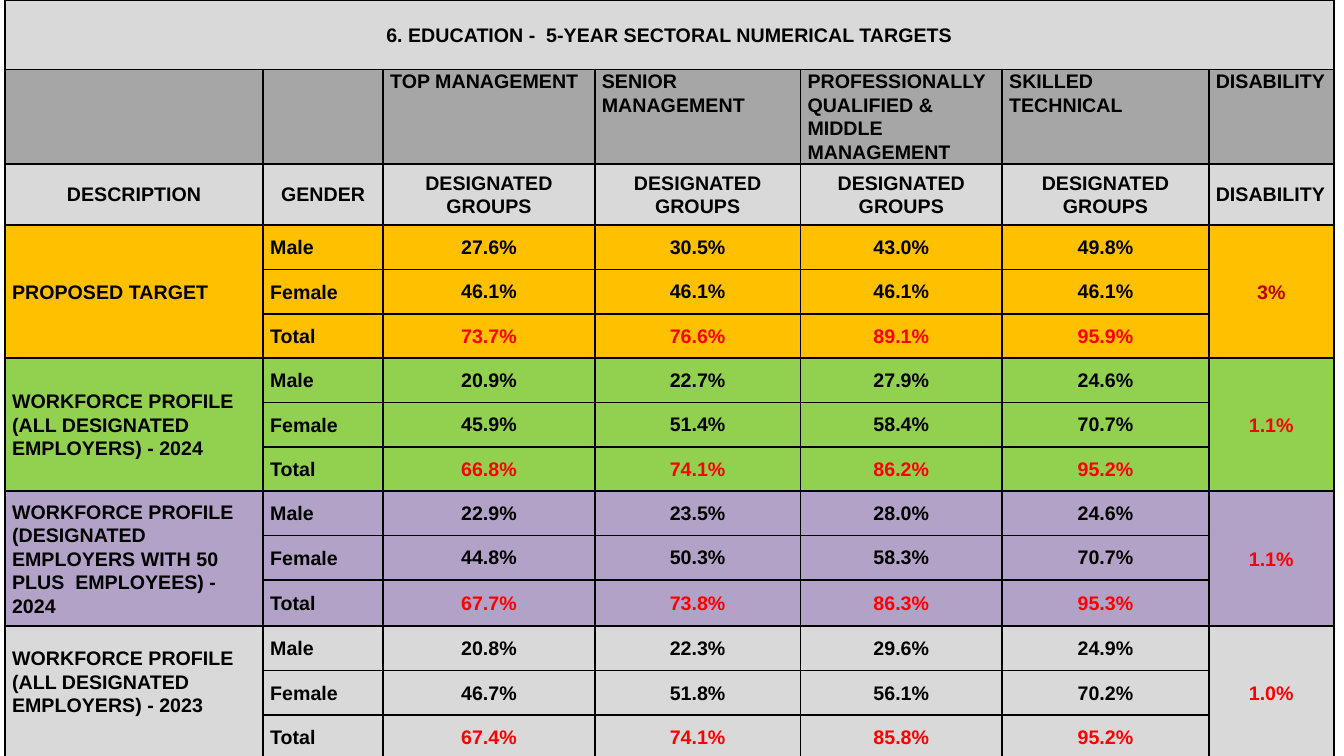
from lxml import etree
from pptx import Presentation
from pptx.dml.color import RGBColor
from pptx.enum.text import MSO_ANCHOR, PP_ALIGN
from pptx.oxml.ns import qn
from pptx.util import Inches, Pt

LEFT, CENTER = PP_ALIGN.LEFT, PP_ALIGN.CENTER
TOP, MIDDLE = MSO_ANCHOR.TOP, MSO_ANCHOR.MIDDLE

BLACK = RGBColor(0x00, 0x00, 0x00)
RED = RGBColor(0xFF, 0x00, 0x00)
DARK_RED = RGBColor(0xC0, 0x00, 0x00)
LIGHT_GREY = RGBColor(0xD9, 0xD9, 0xD9)
GREY = RGBColor(0xA6, 0xA6, 0xA6)
ORANGE = RGBColor(0xFF, 0xC0, 0x00)
GREEN = RGBColor(0x92, 0xD0, 0x50)
PURPLE = RGBColor(0xB3, 0xA2, 0xC7)

TITLE = "6. EDUCATION -  5-YEAR SECTORAL NUMERICAL TARGETS"
LEVELS = ["", "", "TOP MANAGEMENT", "SENIOR MANAGEMENT",
          "PROFESSIONALLY QUALIFIED & MIDDLE MANAGEMENT",
          "SKILLED TECHNICAL", "DISABILITY"]
HEADINGS = ["DESCRIPTION", "GENDER"] + ["DESIGNATED GROUPS"] * 4 + ["DISABILITY"]
GENDERS = ["Male", "Female", "Total"]

# Description, fill, disability share, its colour, one row of shares per gender
GROUPS = [
    ("PROPOSED TARGET", ORANGE, "3%", DARK_RED,
     [(27.6, 30.5, 43.0, 49.8), (46.1, 46.1, 46.1, 46.1), (73.7, 76.6, 89.1, 95.9)]),
    ("WORKFORCE PROFILE (ALL DESIGNATED EMPLOYERS) - 2024", GREEN, "1.1%", RED,
     [(20.9, 22.7, 27.9, 24.6), (45.9, 51.4, 58.4, 70.7), (66.8, 74.1, 86.2, 95.2)]),
    ("WORKFORCE PROFILE (DESIGNATED EMPLOYERS WITH 50 PLUS  EMPLOYEES) - 2024",
     PURPLE, "1.1%", RED,
     [(22.9, 23.5, 28.0, 24.6), (44.8, 50.3, 58.3, 70.7), (67.7, 73.8, 86.3, 95.3)]),
    ("WORKFORCE PROFILE (ALL DESIGNATED EMPLOYERS) - 2023", LIGHT_GREY, "1.0%", RED,
     [(20.8, 22.3, 29.6, 24.9), (46.7, 51.8, 56.1, 70.2), (67.4, 74.1, 85.8, 95.2)]),
]

COL_WIDTHS = [2.56, 1.19, 2.1, 2.04, 2, 2.05, 1.24]
ROW_HEIGHTS = [0.69, 0.9, 0.61] + [0.44] * 8 + [0.46] + [0.44] * 3


def add_borders(cell):
    tc_pr = cell._tc.get_or_add_tcPr()
    for i, side in enumerate(("a:lnL", "a:lnR", "a:lnT", "a:lnB")):
        ln = etree.Element(qn(side), w=str(Pt(1.5)))
        fill = etree.SubElement(ln, qn("a:solidFill"))
        etree.SubElement(fill, qn("a:srgbClr"), val=str(BLACK))
        tc_pr.insert(i, ln)


def fill_cell(cell, text, fill, align=CENTER, color=BLACK, anchor=MIDDLE,
              spacing=1.07, side=0.07, top=0, bottom=0):
    cell.fill.solid()
    cell.fill.fore_color.rgb = fill
    cell.vertical_anchor = anchor
    cell.margin_left = cell.margin_right = Inches(side)
    cell.margin_top, cell.margin_bottom = Inches(top), Inches(bottom)
    p = cell.text_frame.paragraphs[0]
    p.text = text
    p.alignment = align
    p.line_spacing = spacing
    p.font.size = Pt(14)
    for r in p.runs:
        r.font.name = "Arial"
        r.font.size = Pt(14)
        r.font.bold = True
        r.font.color.rgb = color


def add_header(table):
    table.cell(0, 0).merge(table.cell(0, len(COL_WIDTHS) - 1))
    fill_cell(table.cell(0, 0), TITLE, LIGHT_GREY)
    for col, (level, heading) in enumerate(zip(LEVELS, HEADINGS)):
        fill_cell(table.cell(1, col), level, GREY, LEFT, anchor=TOP)
        align = LEFT if heading == "DISABILITY" else CENTER
        fill_cell(table.cell(2, col), heading, LIGHT_GREY, align)


def add_group(table, top_row, group):
    description, fill, disability, disability_color, shares = group
    is_last = group is GROUPS[-1]
    # Labels that span the three gender rows
    last_col = len(COL_WIDTHS) - 1
    for col in (0, last_col):
        table.cell(top_row, col).merge(table.cell(top_row + 2, col))
        for row in range(top_row, top_row + 3):
            fill_cell(table.cell(row, col), "", fill)
    fill_cell(table.cell(top_row, 0), description, fill, LEFT,
              bottom=0.22 if is_last else 0)
    fill_cell(table.cell(top_row, last_col), disability, fill, color=disability_color)
    # Gender rows
    layout = {} if is_last else {"spacing": 1.0, "side": 0.01, "top": 0.01}
    for row, (gender, values) in enumerate(zip(GENDERS, shares), top_row):
        fill_cell(table.cell(row, 1), gender, fill, LEFT)
        color = RED if gender == "Total" else BLACK
        for col, value in enumerate(values, 2):
            fill_cell(table.cell(row, col), f"{value:.1f}%", fill, color=color, **layout)


def add_targets_table(slide, left, top, width, height):
    frame = slide.shapes.add_table(len(ROW_HEIGHTS), len(COL_WIDTHS), Inches(left),
                                   Inches(top), Inches(width), Inches(height))
    table = frame.table
    table.first_row = table.horz_banding = False
    for column, col_width in zip(table.columns, COL_WIDTHS):
        column.width = Inches(col_width)
    for row, row_height in zip(table.rows, ROW_HEIGHTS):
        row.height = Inches(row_height)
    add_header(table)
    for i, group in enumerate(GROUPS):
        add_group(table, 3 + 3 * i, group)
    for cell in table.iter_cells():
        add_borders(cell)


def main():
    prs = Presentation()
    prs.slide_width, prs.slide_height = Inches(13.33), Inches(7.5)
    slide = prs.slides.add_slide(prs.slide_layouts[6])
    add_targets_table(slide, 0.05, 0, sum(COL_WIDTHS), sum(ROW_HEIGHTS))
    prs.save("out.pptx")


if __name__ == "__main__":
    main()
